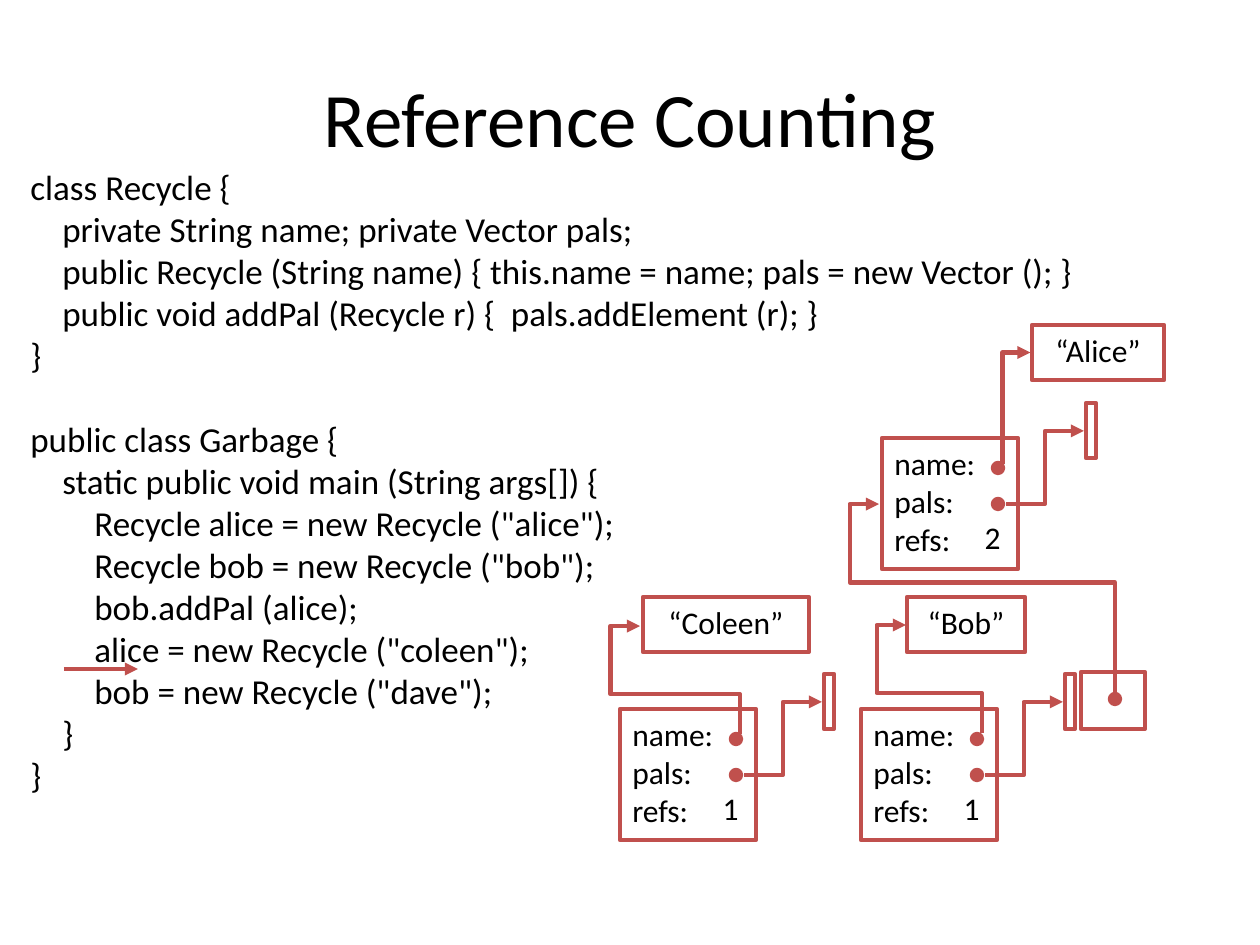
"""Build the Reference Counting slide: Java code beside a diagram of the object graph."""
import pptx
import pptx.dml.color
import pptx.enum.shapes
import pptx.enum.text
import pptx.oxml.ns
import pptx.util
from lxml import etree

PX = pptx.util.Inches(1) / 126
RED = pptx.dml.color.RGBColor(0xC0, 0x50, 0x4D)
BLACK = pptx.dml.color.RGBColor(0, 0, 0)
WHITE = pptx.dml.color.RGBColor(255, 255, 255)
RECT = pptx.enum.shapes.MSO_SHAPE.RECTANGLE
OVAL = pptx.enum.shapes.MSO_SHAPE.OVAL
LEFT = pptx.enum.text.PP_ALIGN.LEFT
CENTER = pptx.enum.text.PP_ALIGN.CENTER
qn = pptx.oxml.ns.qn

deck = pptx.Presentation()
deck.slide_width, deck.slide_height = round(1260 * PX), round(945 * PX)
slide = deck.slides.add_slide(deck.slide_layouts[6])


def box(kind, area, lines=(), size=18, align=LEFT, wrap=True, fill=None, line=RED):
    area = [round(v * PX) for v in area]
    if kind is None:
        item = slide.shapes.add_textbox(*area)
    else:
        item = slide.shapes.add_shape(kind, *area)
        item.shadow.inherit = False
        for paint, colour in ((item.fill, fill), (item.line.fill, line)):
            if colour is None:
                paint.background()
            else:
                paint.solid()
                paint.fore_color.rgb = colour
        if line is not None:
            item.line.width = pptx.util.Pt(2.5)
    frame = item.text_frame
    frame.word_wrap = wrap
    frame.vertical_anchor = pptx.enum.text.MSO_ANCHOR.TOP
    for index, words in enumerate(lines):
        paragraph = frame.add_paragraph() if index else frame.paragraphs[0]
        paragraph.alignment = align
        run = paragraph.add_run()
        run.text = words
        run.font.name = "Calibri"
        run.font.size = pptx.util.Pt(size)
        run.font.color.rgb = BLACK
    return frame


def link(area, preset="bentConnector3", turn=0, flip=None, bends=()):
    x, y, w, h = (round(v * PX) for v in area)
    arrow = slide.shapes.add_connector(
        pptx.enum.shapes.MSO_CONNECTOR.ELBOW, x, y, x + w, y + h)
    arrow.line.color.rgb = RED
    arrow.line.width = pptx.util.Pt(2.5)
    properties = arrow._element.spPr
    frame = properties.find(qn("a:xfrm"))
    if turn:
        frame.set("rot", str(turn * 60000))
    if flip:
        frame.set(flip, "1")
    geometry = properties.find(qn("a:prstGeom"))
    geometry.set("prst", preset)
    for number, bend in enumerate(bends, 1):
        etree.SubElement(geometry.find(qn("a:avLst")), qn("a:gd"),
                         name=f"adj{number}", fmla=f"val {round(bend * 100000)}")
    etree.SubElement(properties.find(qn("a:ln")), qn("a:tailEnd"), type="triangle")
    etree.SubElement(properties, qn("a:effectLst"))


title = box(None, (63, 38, 1134, 157), ["Reference Counting"], 44, CENTER)
title.vertical_anchor = pptx.enum.text.MSO_ANCHOR.MIDDLE

CODE = [
    (0, "class Recycle {"),
    (1, "private String name; private Vector pals;"),
    (1, "public Recycle (String name) { this.name = name; pals = new Vector (); }"),
    (1, "public void addPal (Recycle r) {  pals.addElement (r); }"),
    (0, "}"),
    (0, "public class Garbage {"),
    (1, "static public void main (String args[]) {"),
    (2, 'Recycle alice = new Recycle ("alice");'),
    (2, 'Recycle bob = new Recycle ("bob");'),
    (2, "bob.addPal (alice);"),
    (2, 'alice = new Recycle ("coleen");'),
    (2, 'bob = new Recycle ("dave");'),
    (1, "}"),
    (0, "}"),
]
code = box(None, (18, 159, 1235, 643), [words for depth, words in CODE], 20)
for paragraph, (depth, words) in zip(code.paragraphs, CODE):
    paragraph._p.get_or_add_pPr().set("marL", str(round(depth * 32 * PX)))
    if words.startswith("public class"):
        paragraph.space_before = pptx.util.Pt(24)

OBJECTS = [
    ("“Alice”", (1032, 325, 132, 55), (882, 438), "2", WHITE,
     ((961, 394, 111, 28), "bentConnector2", 270)),
    ("“Bob”", (907, 597, 118, 55), (861, 709), "1", None,
     ((890, 641, 108, 76), "bentConnector4", 90, "flipH", (0.37, 1.385))),
    ("“Coleen”", (643, 597, 166, 55), (620, 709), "1", None,
     ((636, 630, 108, 100), "bentConnector4", 90, "flipH", (0.37, 1.294))),
]
for name, name_area, (x, y), refs, refs_fill, name_link in OBJECTS:
    box(RECT, name_area, [name], align=CENTER, wrap=False)
    box(RECT, (x, y, 136, 131), ["name:", "pals:", "refs:"])
    for dot_y in (25, 61):
        box(OVAL, (x + 111, y + dot_y, 10, 10), fill=RED)
    box(RECT, (x + 88, y + 74, 45, 50), [refs], align=CENTER, wrap=False,
        fill=refs_fill, line=None)
    box(RECT, (x + 204, y - 35, 10, 55))
    link(*name_link)
    link((x + 124, y - 7, 78, 73), flip="flipV", bends=(0.5,))

box(RECT, (1081, 672, 64, 57))
box(OVAL, (1110, 694, 10, 10), fill=RED)
link((903, 480, 188, 236), "bentConnector4", 90, "flipH", (0.583, 1.124))
link((64, 669, 74, 0), "line")

deck.save("out.pptx")
